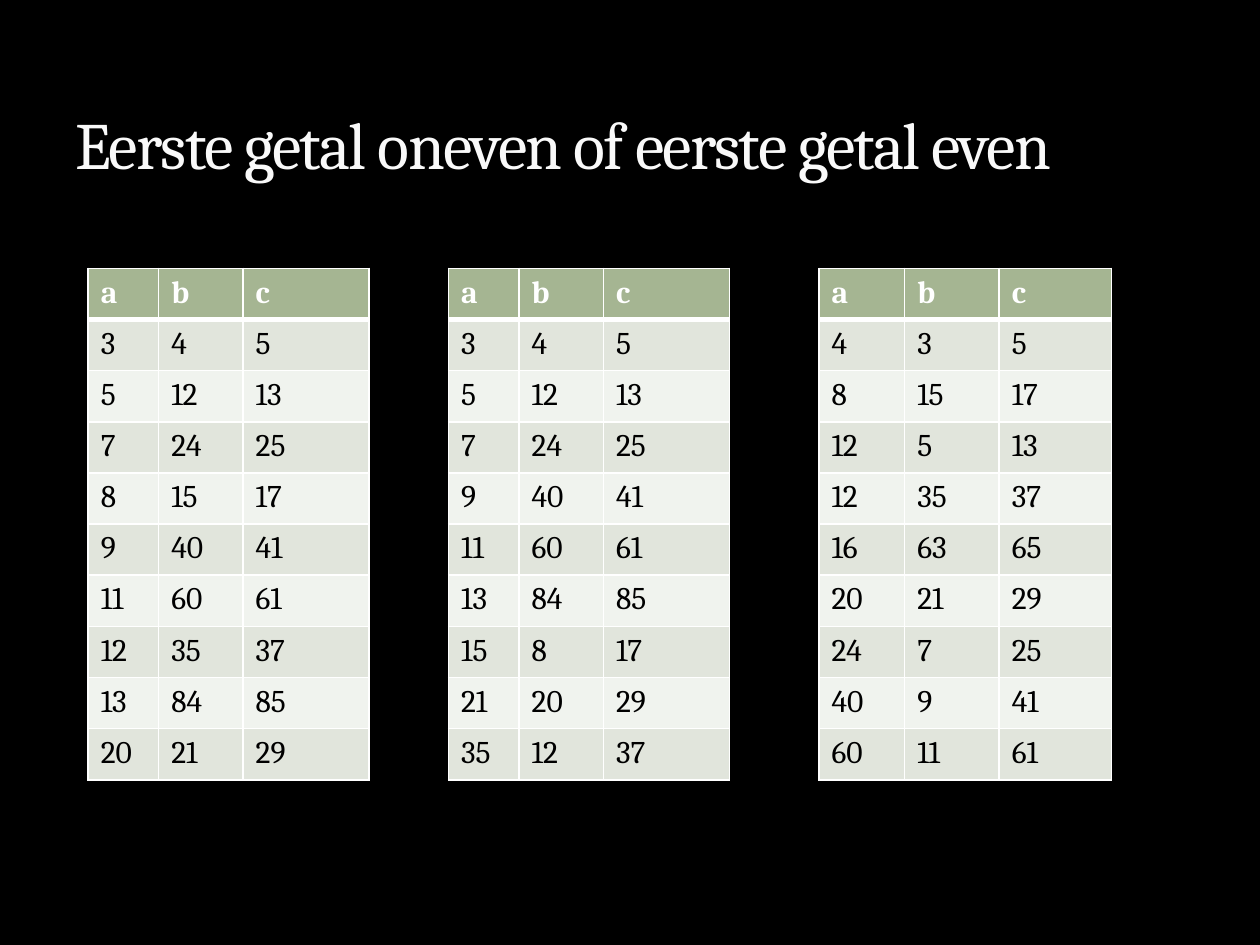
from lxml import etree
from pptx import Presentation
from pptx.dml.color import RGBColor
from pptx.enum.text import MSO_ANCHOR
from pptx.oxml import parse_xml
from pptx.oxml.ns import nsdecls
from pptx.util import Inches, Pt

BOTTOM = MSO_ANCHOR.BOTTOM
BLACK = RGBColor(0x00, 0x00, 0x00)
WHITE = RGBColor(0xFF, 0xFF, 0xFF)
TITLE_COLOR = RGBColor(0xF9, 0xF9, 0xF9)
TITLE_OUTLINE = RGBColor(0x3C, 0x44, 0x22)
HEADER_FILL = RGBColor(0xA5, 0xB5, 0x92)
BAND_FILLS = (RGBColor(0xE1, 0xE5, 0xDC), RGBColor(0xF0, 0xF3, 0xEE))
FONT = "Cambria"

TITLE = "Eerste getal oneven of eerste getal even"
HEADER = ("a", "b", "c")
ALL_TRIPLES = [
    (3, 4, 5), (5, 12, 13), (7, 24, 25), (8, 15, 17), (9, 40, 41),
    (11, 60, 61), (12, 35, 37), (13, 84, 85), (20, 21, 29),
]
ODD_FIRST = [
    (3, 4, 5), (5, 12, 13), (7, 24, 25), (9, 40, 41), (11, 60, 61),
    (13, 84, 85), (15, 8, 17), (21, 20, 29), (35, 12, 37),
]
EVEN_FIRST = [
    (4, 3, 5), (8, 15, 17), (12, 5, 13), (12, 35, 37), (16, 63, 65),
    (20, 21, 29), (24, 7, 25), (40, 9, 41), (60, 11, 61),
]
# left edge, column widths, triples
TABLES = [
    (0.7, (0.56, 0.67, 1), ALL_TRIPLES),
    (3.56, (0.56, 0.67, 1), ODD_FIRST),
    (6.5, (0.68, 0.75, 0.89), EVEN_FIRST),
]
TABLE_TOP = 2.13
ROW_HEIGHT = 0.406


def line_xml(tag, points, color, alpha=100):
    """Return a solid line element of the given tag, alpha in percent."""
    return parse_xml(
        f'<a:{tag} {nsdecls("a")} w="{Pt(points)}"><a:solidFill>'
        f'<a:srgbClr val="{color}"><a:alpha val="{alpha * 1000}"/></a:srgbClr>'
        f'</a:solidFill><a:prstDash val="solid"/></a:{tag}>'
    )


def style_text(span, size, color, bold=False):
    span.font.name = FONT
    span.font.size = Pt(size)
    span.font.color.rgb = color
    span.font.bold = bold


def add_title(page):
    box = page.shapes.add_textbox(Inches(0.5), Inches(0.17), Inches(9), Inches(1.33))
    frame = box.text_frame
    frame.word_wrap = True
    frame.vertical_anchor = BOTTOM
    frame.text = TITLE
    span = frame.paragraphs[0].runs[0]
    style_text(span, 37.8, TITLE_COLOR)
    properties = span.font._element
    properties.set("spc", "-100")
    properties.insert(0, line_xml("ln", 0.25, TITLE_OUTLINE, alpha=25))


def fill_cell(cell, value, row):
    is_header = row == 0
    cell.text = str(value)
    span = cell.text_frame.paragraphs[0].runs[0]
    style_text(span, 18, WHITE if is_header else BLACK, bold=is_header)
    cell.fill.solid()
    cell.fill.fore_color.rgb = HEADER_FILL if is_header else BAND_FILLS[(row - 1) % 2]
    borders = {
        "lnL": 1,
        "lnR": 1,
        "lnT": 3 if row == 1 else 1,
        "lnB": 3 if is_header else 1,
    }
    properties = cell._tc.get_or_add_tcPr()
    for position, (side, points) in enumerate(borders.items()):
        properties.insert(position, line_xml(side, points, WHITE))


def add_triples_table(page, left, widths, triples):
    rows = [HEADER, *triples]
    table = page.shapes.add_table(
        len(rows), len(HEADER), Inches(left), Inches(TABLE_TOP),
        Inches(sum(widths)), Inches(ROW_HEIGHT * len(rows)),
    ).table
    for column, width in zip(table.columns, widths):
        column.width = Inches(width)
    for row, values in enumerate(rows):
        table.rows[row].height = Inches(ROW_HEIGHT)
        for column, value in enumerate(values):
            fill_cell(table.cell(row, column), value, row)


def main():
    deck = Presentation()
    deck.slide_width, deck.slide_height = Inches(10), Inches(7.5)
    page = deck.slides.add_slide(deck.slide_layouts[6])
    page.background.fill.solid()
    page.background.fill.fore_color.rgb = BLACK
    add_title(page)
    for left, widths, triples in TABLES:
        add_triples_table(page, left, widths, triples)
    deck.save("out.pptx")


if __name__ == "__main__":
    main()
